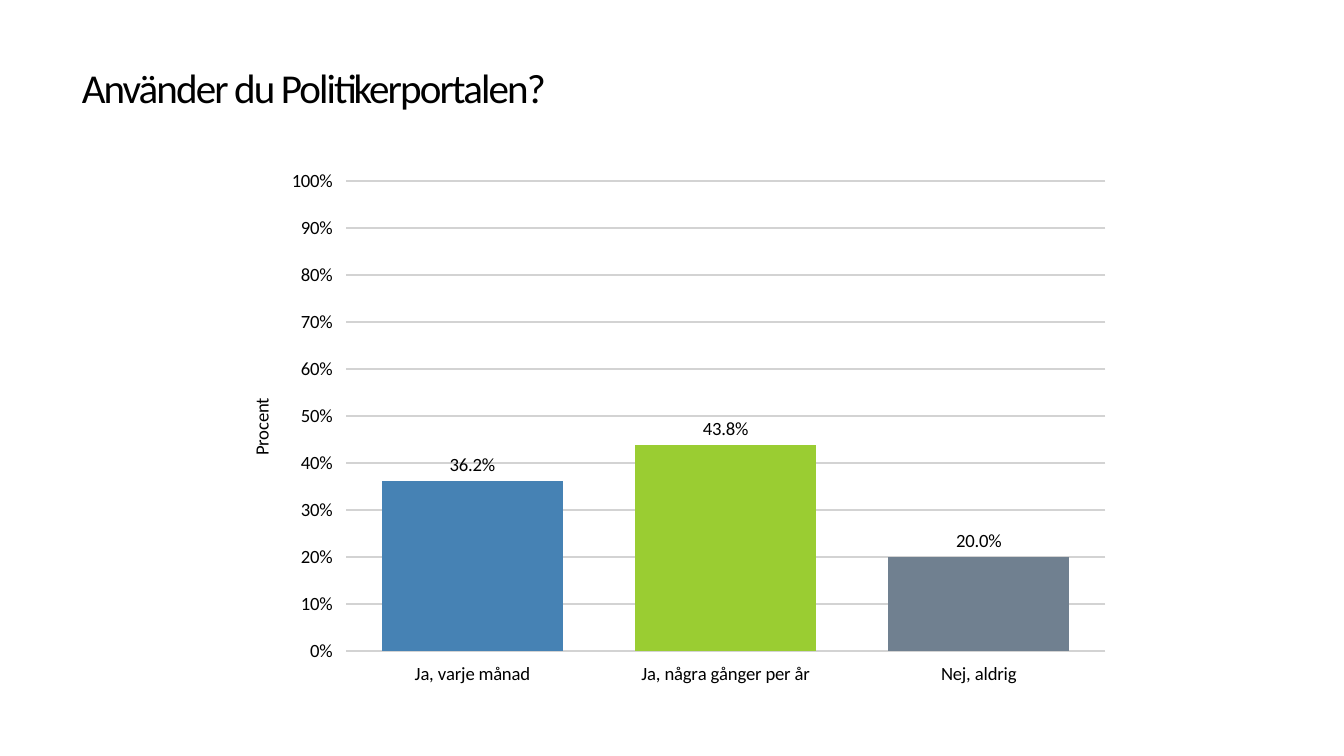
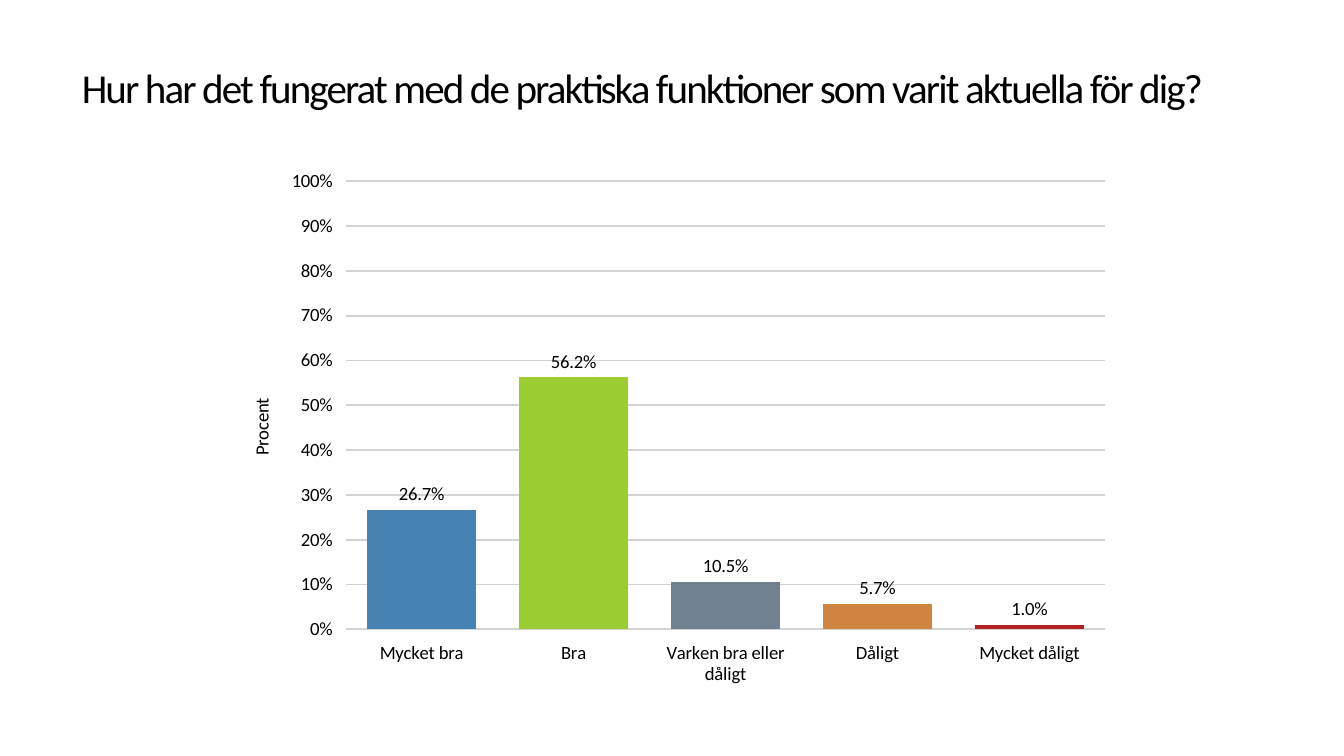
"""Build two survey slides, each with a title and a percentage column chart."""
from dataclasses import dataclass

from pptx import Presentation
from pptx.chart.data import CategoryChartData
from pptx.dml.color import RGBColor
from pptx.enum.chart import XL_CHART_TYPE, XL_LABEL_POSITION
from pptx.enum.text import MSO_ANCHOR
from pptx.oxml import parse_xml
from pptx.oxml.ns import nsdecls, qn
from pptx.util import Inches, Pt

COLUMN = XL_CHART_TYPE.COLUMN_CLUSTERED
OUTSIDE_END = XL_LABEL_POSITION.OUTSIDE_END
TOP = MSO_ANCHOR.TOP

FONT = "Calibri"
BLACK = RGBColor(0x00, 0x00, 0x00)
GRID = RGBColor(0xD3, 0xD3, 0xD3)
BLUE = RGBColor(0x46, 0x82, 0xB4)
GREEN = RGBColor(0x9A, 0xCD, 0x32)
SLATE = RGBColor(0x70, 0x80, 0x90)
ORANGE = RGBColor(0xCD, 0x85, 0x3F)
RED = RGBColor(0xB2, 0x22, 0x22)
BAR_COLORS = (BLUE, GREEN, SLATE, ORANGE, RED)


@dataclass(frozen=True)
class Question:
    title: str
    answers: dict[str, float]
    plot_height: float


QUESTIONS = (
    Question(
        "Använder du Politikerportalen?",
        {"Ja, varje månad": 0.362, "Ja, några gånger per år": 0.438, "Nej, aldrig": 0.2},
        0.88,
    ),
    Question(
        "Hur har det fungerat med de praktiska funktioner som varit aktuella för dig?",
        {
            "Mycket bra": 0.267,
            "Bra": 0.562,
            "Varken bra eller dåligt": 0.105,
            "Dåligt": 0.057,
            "Mycket dåligt": 0.01,
        },
        0.84,
    ),
)


def style_font(font, size: float) -> None:
    font.name = FONT
    font.size = Pt(size)
    font.bold = False
    font.color.rgb = BLACK


def set_layout(parent, index: int, target: str = "", **lengths: float) -> None:
    for old in parent.findall(qn("c:layout")):
        parent.remove(old)
    parts = f'<c:layoutTarget val="{target}"/>' if target else ""
    parts += "".join(f'<c:{key}Mode val="edge"/>' for key in "xy")
    parts += "".join(f'<c:{key} val="{val}"/>' for key, val in lengths.items())
    xml = f'<c:layout {nsdecls("c")}><c:manualLayout>{parts}</c:manualLayout></c:layout>'
    parent.insert(index, parse_xml(xml))


def add_title(s, text: str) -> None:
    sp = s.shapes.add_textbox(Inches(0.51), Inches(0.46), Inches(8.98), Inches(0.45))
    tf = sp.text_frame
    tf.word_wrap = True
    tf.vertical_anchor = TOP
    tf.text = text
    p = tf.paragraphs[0]
    p.line_spacing = 0.9
    r = p.runs[0]
    style_font(r.font, 22)
    r._r.get_or_add_rPr().set("spc", "-100")


def style_axes(chart) -> None:
    for axis in (chart.category_axis, chart.value_axis):
        axis.format.line.fill.background()
        style_font(axis.tick_labels.font, 10)
    axis = chart.value_axis
    axis.minimum_scale, axis.maximum_scale, axis.major_unit = 0, 1, 0.1
    axis.tick_labels.number_format = "0%"
    axis.tick_labels.number_format_is_linked = False
    line = axis.major_gridlines.format.line
    line.color.rgb = GRID
    line.width = Pt(1)
    tf = axis.axis_title.text_frame
    tf.text = "Procent"
    style_font(tf.paragraphs[0].runs[0].font, 10)
    title = chart.element.find(f".//{qn('c:valAx')}/{qn('c:title')}")
    set_layout(title, 1, x=0.03, y=0.44)


def add_chart(s, question: Question) -> None:
    data = CategoryChartData(number_format="0.0%")
    data.categories = list(question.answers)
    data.add_series("Series 1", list(question.answers.values()))
    chart = s.shapes.add_chart(
        COLUMN, Inches(1.63), Inches(1.19), Inches(6.73), Inches(3.97), data
    ).chart
    style_font(chart.font, 18)
    chart.has_legend = False
    chart.has_title = False
    style_axes(chart)
    plot_area = chart.element.find(f".//{qn('c:plotArea')}")
    set_layout(plot_area, 0, "inner", x=0.14, y=0.04, w=0.84, h=question.plot_height)
    plot = chart.plots[0]
    plot.gap_width = 40
    plot.vary_by_categories = False
    series = plot.series[0]
    series.format.fill.solid()
    series.format.fill.fore_color.rgb = BLUE
    for i, color in zip(range(len(question.answers)), BAR_COLORS):
        fill = series.points[i].format.fill
        fill.solid()
        fill.fore_color.rgb = color
    labels = series.data_labels
    labels.show_value = True
    labels.number_format = "0.0%"
    labels.number_format_is_linked = False
    labels.position = OUTSIDE_END
    style_font(labels.font, 10)


def main() -> None:
    prs = Presentation()
    prs.slide_width = Inches(10)
    prs.slide_height = prs.slide_width * 9 // 16
    for question in QUESTIONS:
        s = prs.slides.add_slide(prs.slide_layouts[6])
        add_title(s, question.title)
        add_chart(s, question)
    prs.save("out.pptx")


if __name__ == "__main__":
    main()
